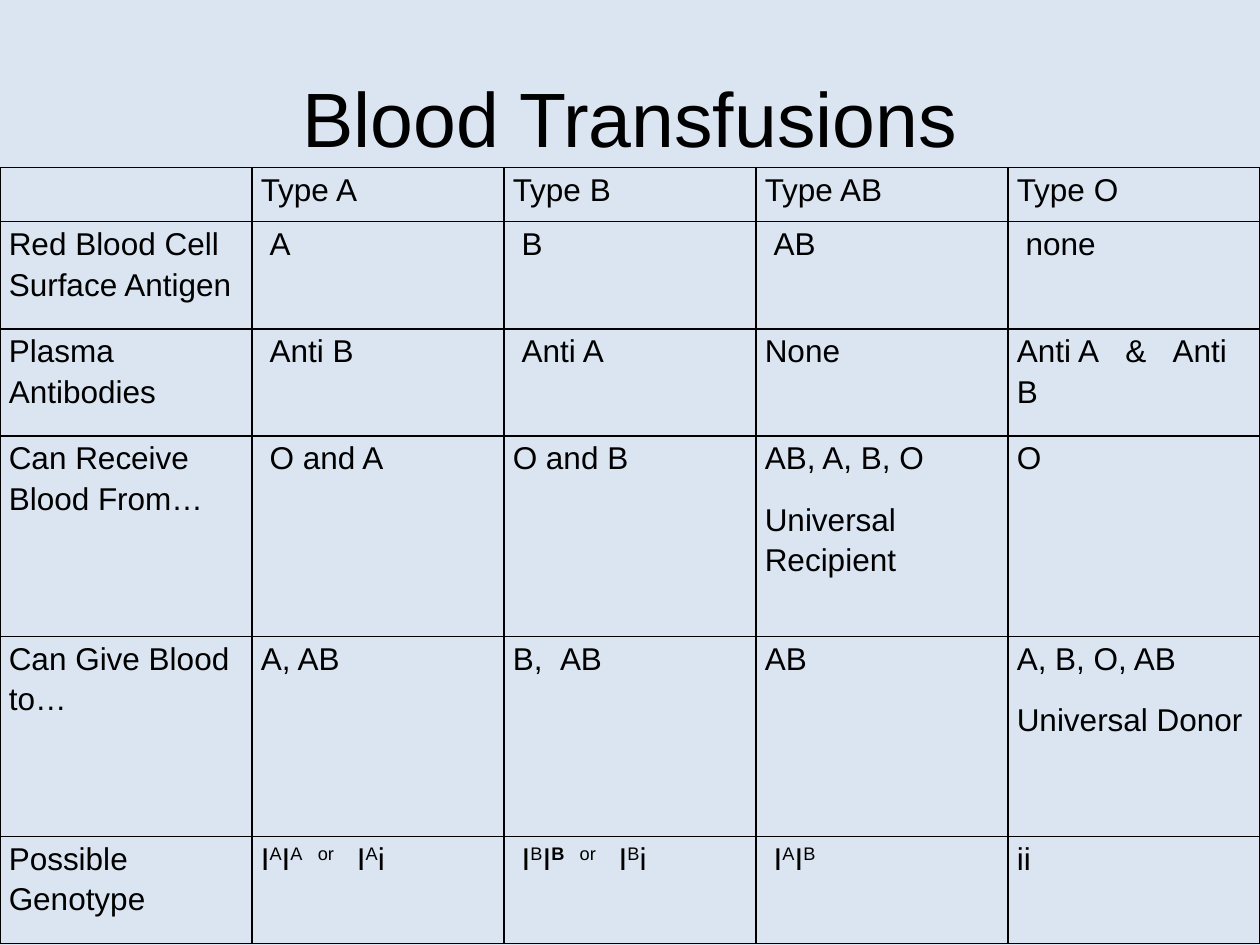
from dataclasses import dataclass

from lxml import etree
from pptx import Presentation
from pptx.dml.color import RGBColor
from pptx.enum.text import MSO_ANCHOR, PP_ALIGN
from pptx.oxml.ns import qn
from pptx.util import Inches, Pt

CENTER, LEFT = PP_ALIGN.CENTER, PP_ALIGN.LEFT
MIDDLE, TOP = MSO_ANCHOR.MIDDLE, MSO_ANCHOR.TOP


@dataclass(frozen=True)
class Theme:
    font: str = "Arial"
    background: str = "DAE5F1"
    ink: str = "000000"
    title_size: float = 44
    body_size: float = 18
    line_spacing: float = 1.15
    paragraph_gap: float = 12
    border: float = 1
    inset: float = 0.07


@dataclass(frozen=True)
class Span:
    text: str
    raised: bool = False
    bold: bool = False
    tracking: float = 0


@dataclass(frozen=True)
class Entry:
    """One cell: each paragraph is a tuple of spans."""
    paragraphs: tuple[tuple[Span, ...], ...]
    indented: bool = False


@dataclass(frozen=True)
class Row:
    height: int  # in grid units
    entries: tuple[Entry, ...]


THEME = Theme()
WIDTH, HEIGHT = Inches(10), Inches(7.5)
COLUMNS = 5
UNIT = HEIGHT / 750
TABLE_TOP = 133
HEADER, SHORT, TALL = 43, 85, 159


def plain(*lines: str, indented: bool = False) -> Entry:
    return Entry(tuple((Span(line),) for line in lines), indented)


def rich(*spans: Span, indented: bool = False) -> Entry:
    return Entry((spans,), indented)


def gap(points: float) -> Span:
    """A single space widened by the given points."""
    return Span(" ", tracking=points)


def allele(letter: str, bold: bool = False) -> tuple[Span, Span]:
    return Span("I"), Span(letter, raised=True, bold=bold)


def either(letter: str, bold: bool = False) -> tuple[Span, ...]:
    """The homozygous or heterozygous genotype of one blood type."""
    return (*allele(letter), *allele(letter, bold), gap(3.7),
            Span("or", raised=True), gap(8), *allele(letter), Span("i"))


ROWS = (
    Row(HEADER, (plain(), plain("Type A"), plain("Type B"),
                 plain("Type AB"), plain("Type O"))),
    Row(SHORT, (plain("Red Blood Cell Surface Antigen"),
                plain("A", indented=True), plain("B", indented=True),
                plain("AB", indented=True), plain("none", indented=True))),
    Row(SHORT, (plain("Plasma Antibodies"),
                plain("Anti B", indented=True), plain("Anti A", indented=True),
                plain("None"),
                rich(Span("Anti A"), gap(10), Span("&"), gap(10), Span("Anti B")))),
    Row(TALL, (plain("Can Receive Blood From…"),
               plain("O and A", indented=True), plain("O and B"),
               plain("AB, A, B, O", "Universal Recipient"), plain("O"))),
    Row(TALL, (plain("Can Give Blood to…"), plain("A, AB"),
               rich(Span("B,"), gap(5), Span("AB")), plain("AB"),
               plain("A, B, O, AB", "Universal Donor"))),
    Row(SHORT, (plain("Possible Genotype"), rich(*either("A")),
                rich(*either("B", bold=True), indented=True),
                rich(*allele("A"), *allele("B"), indented=True), plain("ii"))),
)


def write(paragraph, spans: tuple[Span, ...], *, size: float, align=LEFT,
          line_spacing: float = 1, before: float = 0) -> None:
    paragraph.alignment = align
    paragraph.line_spacing = line_spacing
    paragraph.space_before = Pt(before)
    for span in spans:
        run = paragraph.add_run()
        run.text = span.text
        run.font.name = THEME.font
        run.font.size = Pt(size)
        run.font.bold = span.bold
        run.font.color.rgb = RGBColor.from_string(THEME.ink)
        properties = run._r.get_or_add_rPr()
        if span.raised:
            properties.set("baseline", "30000")
        if span.tracking:
            properties.set("spc", str(round(span.tracking * 100)))


def outline(cell) -> None:
    properties = cell._tc.get_or_add_tcPr()
    for side in ("lnL", "lnR", "lnT", "lnB"):
        line = etree.SubElement(properties, qn(f"a:{side}"), w=str(Pt(THEME.border)))
        fill = etree.SubElement(line, qn("a:solidFill"))
        etree.SubElement(fill, qn("a:srgbClr"), val=THEME.ink)


def fill_cell(cell, entry: Entry) -> None:
    outline(cell)
    cell.fill.background()
    cell.vertical_anchor = TOP
    cell.margin_left = Inches(THEME.inset * (2 if entry.indented else 1))
    cell.margin_right = Inches(THEME.inset)
    cell.margin_top = cell.margin_bottom = 0
    frame = cell.text_frame
    for index, spans in enumerate(entry.paragraphs):
        paragraph = frame.add_paragraph() if index else frame.paragraphs[0]
        write(paragraph, spans, size=THEME.body_size,
              line_spacing=THEME.line_spacing,
              before=THEME.paragraph_gap if index else 0)


def add_title(slide, text: str) -> None:
    title = slide.shapes.title
    title.left, title.top = round(WIDTH * 0.05), round(HEIGHT * 0.04)
    title.width, title.height = round(WIDTH * 0.9), Inches(1.25)
    title.text_frame.vertical_anchor = MIDDLE
    write(title.text_frame.paragraphs[0], (Span(text),),
          size=THEME.title_size, align=CENTER)


def add_blood_table(slide, rows: tuple[Row, ...]) -> None:
    total = sum(row.height for row in rows)
    table = slide.shapes.add_table(len(rows), COLUMNS, 0, round(TABLE_TOP * UNIT),
                                   WIDTH, round(total * UNIT)).table
    table.first_row = table.horz_banding = False
    for column in table.columns:
        column.width = WIDTH // COLUMNS
    for row_index, row in enumerate(rows):
        table.rows[row_index].height = round(row.height * UNIT)
        for column_index, entry in enumerate(row.entries):
            fill_cell(table.cell(row_index, column_index), entry)


def main() -> None:
    presentation = Presentation()
    presentation.slide_width, presentation.slide_height = WIDTH, HEIGHT
    slide = presentation.slides.add_slide(
        presentation.slide_layouts.get_by_name("Title Only"))
    background = slide.background.fill
    background.solid()
    background.fore_color.rgb = RGBColor.from_string(THEME.background)
    add_title(slide, "Blood Transfusions")
    add_blood_table(slide, ROWS)
    presentation.save("out.pptx")


if __name__ == "__main__":
    main()
